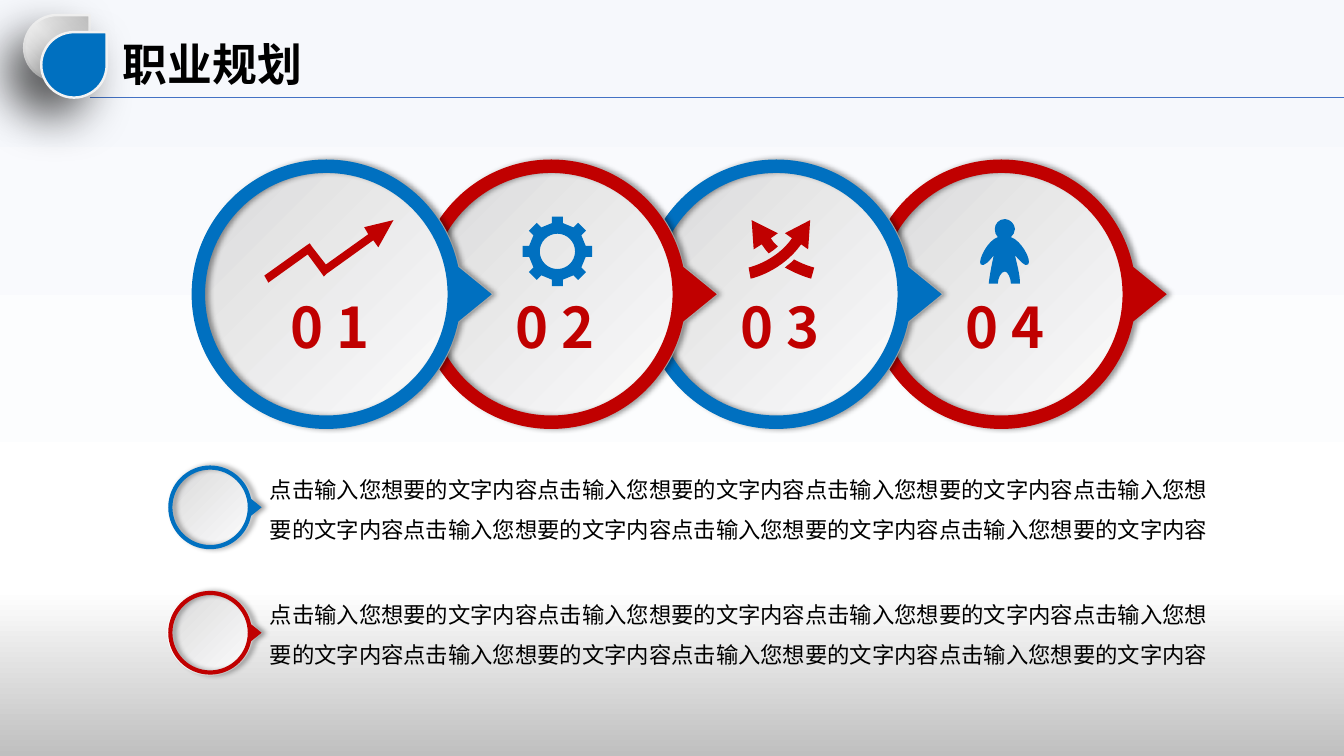
from dataclasses import dataclass
from itertools import pairwise
from math import cos, pi, radians, sin, tan

from lxml.etree import SubElement
from pptx import Presentation
from pptx.dml.color import RGBColor
from pptx.enum.shapes import MSO_CONNECTOR, MSO_SHAPE
from pptx.enum.text import MSO_ANCHOR, PP_ALIGN
from pptx.oxml.ns import qn
from pptx.util import Cm, Pt


@dataclass(frozen=True)
class Theme:
    font: str = "Noto Sans CJK SC"
    blue: str = "0070C0"
    red: str = "C00000"
    ink: str = "000000"
    white: str = "FFFFFF"
    rule: str = "4472C4"
    drop_edge: str = "F2F2F2"
    backdrop: tuple = ((0, "F6F8FC"), (78, "FFFFFF"), (100, "BFBFBF"))
    silver: tuple = ((0, "FFFFFF"), (50, "F2F2F2"), (100, "BFBFBF"))
    disc: tuple = ((0, "D9D9DA"), (100, "FFFFFF"))
    title_size: int = 32
    number_size: int = 40
    body_size: int = 16


T = Theme()
BODY = "点击输入您想要的文字内容" * 7

# Icon outlines: a pair is a straight step, six numbers are a cubic curve.
# One unit is 1/267 of the bubble's diameter.
TREND = [[(128, 0), (99, 7), (103, 14), (61, 44), (47, 26), (45, 23), (42, 25), (0, 55),
          (4, 62), (43, 34), (57, 53), (59, 56), (62, 53), (108, 20), (113, 27)]]
CROSSING = [
    [(13, 24), (15, 27, 17, 30, 20, 33), (23, 31, 26, 29, 29, 26),
     (26, 24, 24, 21, 22, 18), (29, 13), (3, 0), (5, 29)],
    [(52, 24), (59, 29), (61, 0), (36, 13), (43, 18), (27, 41, 0, 47, 0, 47),
     (2, 58), (3, 58, 33, 51, 52, 24)],
    [(45, 39), (43, 42, 39, 44, 36, 47), (50, 55, 62, 58, 62, 58),
     (65, 47), (65, 47, 56, 45, 45, 39)],
]
PERSON = [[(33, 18), (35, 16, 37, 13, 37, 10), (37, 5, 32, 0, 27, 0), (21, 0, 17, 5, 17, 10),
           (17, 13, 18, 16, 20, 18), (10, 21, 0, 41, 3, 45), (6, 48, 12, 41, 16, 36),
           (14, 45, 12, 55, 11, 64), (20, 64), (20, 59, 23, 52, 27, 52),
           (30, 52, 33, 59, 33, 64), (42, 64), (42, 55, 39, 45, 37, 36),
           (42, 41, 47, 48, 50, 45), (54, 41, 43, 21, 33, 18)]]


def arc(cx, cy, radius, *angles):
    """A start point, then one cubic curve to each further angle."""
    ends = [radians(a) for a in angles]
    steps = [(cx + radius * cos(ends[0]), cy + radius * sin(ends[0]))]
    for a, b in pairwise(ends):
        k = 4 / 3 * tan((b - a) / 4)
        steps.append((cx + radius * (cos(a) - k * sin(a)), cy + radius * (sin(a) + k * cos(a)),
                      cx + radius * (cos(b) + k * sin(b)), cy + radius * (sin(b) - k * cos(b)),
                      cx + radius * cos(b), cy + radius * sin(b)))
    return steps


def hole(cx, cy, radius):
    return arc(cx, cy, radius, 360, 270, 180, 90, 0)


def gear():
    teeth = []
    for k in range(8):
        a = k * pi / 4
        for out, side in ((28, -5.5), (34.5, -5.5), (34.5, 5.5), (28, 5.5)):
            teeth.append((out * cos(a) - side * sin(a), out * sin(a) + side * cos(a)))
    return [teeth, hole(0, 0, 17.5)]


def color(value):
    return RGBColor.from_string(value)


def paint_gradient(fill, root, stops, angle):
    fill.gradient()
    fill.gradient_angle = -angle % 360
    gs_lst = next(root.iter(qn("a:gsLst")))
    for gs in list(gs_lst):
        gs_lst.remove(gs)
    for pos, value in stops:
        gs = SubElement(gs_lst, qn("a:gs"), pos=str(pos * 1000))
        SubElement(gs, qn("a:srgbClr"), val=value)


def paint(sp, fill, angle=0, edge=None, width=0, shadow=None):
    if isinstance(fill, str):
        sp.fill.solid()
        sp.fill.fore_color.rgb = color(fill)
    else:
        paint_gradient(sp.fill, sp._element, fill, angle)
    if edge:
        sp.line.color.rgb = color(edge)
        sp.line.width = Pt(width)
    else:
        sp.line.fill.background()
    sp.shadow.inherit = False
    if shadow:
        alpha, blur, dist, direction = shadow
        effects = sp._element.spPr.find(qn("a:effectLst"))
        outer = SubElement(effects, qn("a:outerShdw"), blurRad=str(Pt(blur)), dist=str(Pt(dist)),
                           dir=str(direction * 60000), algn="ctr", rotWithShape="0")
        clr = SubElement(outer, qn("a:srgbClr"), val=T.ink)
        SubElement(clr, qn("a:alpha"), val=str(alpha * 1000))


def write(tf, text, size, value, bold=False, wrap=True, spacing=1.0):
    tf.text = text
    tf.word_wrap = wrap
    tf.vertical_anchor = MSO_ANCHOR.TOP
    p = tf.paragraphs[0]
    p.alignment = PP_ALIGN.LEFT
    p.line_spacing = spacing
    font = p.runs[0].font
    font.size, font.bold, font.name = Pt(size), bold, T.font
    font.color.rgb = color(value)
    SubElement(p.runs[0]._r.get_or_add_rPr(), qn("a:ea"), typeface=T.font)


def add_outline(shapes, contours, left, top, unit=1.0):
    """Draws closed contours whose origin is at left, top (cm)."""
    def place(step):
        return [(Cm(left + x * unit), Cm(top + y * unit)) for x, y in zip(step[::2], step[1::2])]

    placed = [[place(step) for step in contour] for contour in contours]
    builder = shapes.build_freeform(*placed[0][0][-1])
    for i, contour in enumerate(placed):
        if i:
            builder.move_to(*contour[0][-1])
        builder.add_line_segments([step[-1] for step in contour[1:]])
    sp = builder.convert_to_shape()
    # Bend the straight segments that have control points
    segments = list(sp._element.iter(qn("a:lnTo")))
    for segment, step in zip(segments, [step for c in placed for step in c[1:]]):
        if len(step) == 3:
            segment.tag = qn("a:cubicBezTo")
            segment.remove(segment[0])
            for x, y in step:
                SubElement(segment, qn("a:pt"), x=str(x - sp.left), y=str(y - sp.top))
    return sp


def add_bubble(s, left, top, size, ring):
    """A pale disc in a coloured ring that points right."""
    shapes = s.shapes.add_group_shape().shapes
    r = size / 2
    pointer = arc(r, r, r, 11.7, 90, 180, 270, 348.3) + [(size * 1.114, r)]
    paint(add_outline(shapes, [pointer], left, top), T.disc, 45, T.white, 1.5)
    paint(add_outline(shapes, [pointer, hole(r, r, r * 0.9)], left, top), ring,
          shadow=(40, 4, 3, 0))
    return shapes


def add_step(s, left, top, size, ring, number, icon, icon_at, icon_color):
    shapes = add_bubble(s, left, top, size, ring)
    unit = size / 267
    dx, dy = icon_at
    paint(add_outline(shapes, icon, left + dx * unit, top + dy * unit, unit), icon_color)
    tb = shapes.add_textbox(Cm(left + 88 * unit), Cm(top + 127 * unit), Cm(2.69), Cm(1.96))
    write(tb.text_frame, number, T.number_size, T.red, bold=True, wrap=False)


def add_header(s, left, top, right):
    # Rule and paired drops
    line = s.shapes.add_connector(MSO_CONNECTOR.STRAIGHT, Cm(left + 1.65), Cm(top + 2.08),
                                  Cm(right), Cm(top + 2.08))
    line.line.color.rgb = color(T.rule)
    line.line.width = Pt(0.5)
    SubElement(line._element.spPr, qn("a:effectLst"))
    for offset, fill in ((0, T.silver), (0.43, T.blue)):
        drop = s.shapes.add_shape(MSO_SHAPE.TEAR, Cm(left + offset), Cm(top + offset),
                                  Cm(1.65), Cm(1.65))
        paint(drop, fill, 315, T.drop_edge, 1.75, (50, 35, 20, 135))
    # Title
    title = s.shapes.title
    title.left, title.top = Cm(left + 2.23), Cm(top + 0.43)
    title.width, title.height = Cm(10.67), Cm(1.63)
    write(title.text_frame, "职业规划", T.title_size, T.ink, bold=True)


def add_steps(s, left, top, size, pitch):
    steps = [
        ("0 1", T.blue, TREND, (72, 60), T.red),
        ("0 2", T.red, gear(), (139.5, 91), T.blue),
        ("0 3", T.blue, CROSSING, (106, 60), T.red),
        ("0 4", T.red, PERSON, (110, 59), T.blue),
    ]
    # The last step lies at the back, so each pointer overlaps the next disc
    for i, (number, ring, icon, at, fill) in reversed(list(enumerate(steps))):
        add_step(s, left + i * pitch, top, size, ring, number, icon, at, fill)


def add_note(s, left, top, ring):
    tb = s.shapes.add_textbox(Cm(left + 2.31), Cm(top - 0.2), Cm(24.66), Cm(2.4))
    write(tb.text_frame, BODY, T.body_size, T.ink, spacing=1.5)
    add_bubble(s, left, top, 2.11, ring)


def main():
    prs = Presentation()
    prs.slide_width, prs.slide_height = Cm(33.87), Cm(19.05)
    s = prs.slides.add_slide(prs.slide_layouts[5])
    paint_gradient(s.background.fill, s._element, T.backdrop, 90)
    add_header(s, 0.61, 0.38, 33.87)
    add_steps(s, 4.83, 4.02, 6.79, 5.67)
    for top, ring in ((11.73, T.blue), (14.89, T.red)):
        add_note(s, 4.24, top, ring)
    prs.save("out.pptx")


if __name__ == "__main__":
    main()
